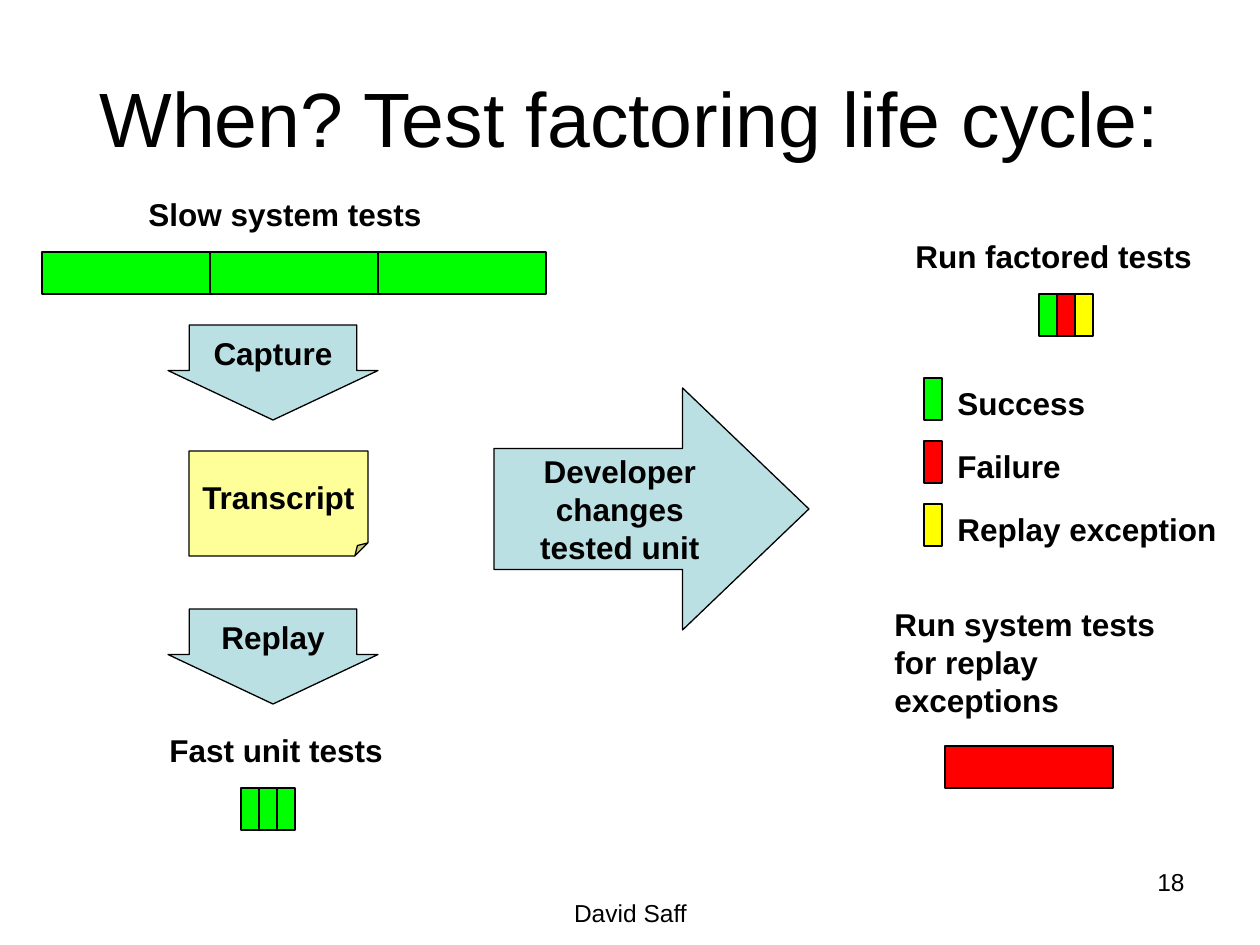
import pptx
import pptx.util
import pptx.dml.color
import pptx.enum.shapes
import pptx.enum.text
import pptx.oxml.ns
import lxml.etree

RGB = pptx.dml.color.RGBColor
BLACK = RGB(0x00, 0x00, 0x00)
GREEN = RGB(0x00, 0xFF, 0x00)
RED = RGB(0xFF, 0x00, 0x00)
YELLOW = RGB(0xFF, 0xFF, 0x00)
CREAM = RGB(0xFF, 0xFF, 0x99)
TEAL = RGB(0xBB, 0xE0, 0xE3)

KIND = pptx.enum.shapes.MSO_SHAPE
ALIGN = pptx.enum.text.PP_ALIGN
ANCHOR = pptx.enum.text.MSO_ANCHOR
PX = pptx.util.Inches(1) / 126
qn = pptx.oxml.ns.qn

deck = pptx.Presentation()
deck.slide_width = round(1260 * PX)
deck.slide_height = round(945 * PX)
slide = deck.slides.add_slide(deck.slide_layouts[5])


def write(text, box=None, shape=None, size=18, bold=True, align=ALIGN.LEFT,
          anchor=ANCHOR.TOP, wrap=True):
    """Put text in the given shape, or in a new text box at box (px)."""
    if shape is None:
        shape = slide.shapes.add_textbox(*[round(v * PX) for v in box])
    frame = shape.text_frame
    frame.text = text
    frame.word_wrap = wrap
    frame.vertical_anchor = anchor
    for para in frame.paragraphs:
        para.alignment = align
        para.font.name = "Arial"
        para.font.size = pptx.util.Pt(size)
        para.font.bold = bold
        para.font.color.rgb = BLACK


def draw(kind, box, color, adjust=None):
    """Add an outlined shape; adjust maps guide names to 1/100000 values."""
    shape = slide.shapes.add_shape(kind, *[round(v * PX) for v in box])
    shape.shadow.inherit = False
    shape.fill.solid()
    shape.fill.fore_color.rgb = color
    shape.line.color.rgb = BLACK
    shape.line.width = pptx.util.Pt(0.75)
    if adjust:
        # python-pptx lists no adjustments for some presets
        geom = shape._element.spPr.find(qn("a:prstGeom"))
        for old in geom.findall(qn("a:avLst")):
            geom.remove(old)
        guides = lxml.etree.SubElement(geom, qn("a:avLst"))
        for name, value in adjust.items():
            lxml.etree.SubElement(guides, qn("a:gd"), name=name,
                                  fmla=f"val {value}")
    return shape


# Title and footer
title = slide.shapes.title
title.left, title.top, title.width, title.height = [
    round(v * PX) for v in (63, 38, 1134, 157)]
write("When? Test factoring life cycle:", shape=title, size=44, bold=False,
      align=ALIGN.CENTER, anchor=ANCHOR.MIDDLE)
write("David Saff", (431, 892, 399, 34), size=14, bold=False,
      align=ALIGN.CENTER)
write("18", (903, 861, 294, 65), size=14, bold=False, align=ALIGN.RIGHT)

# Rows of test bars: left, top, bar width, colors
rows = [
    (42, 252, 168, [GREEN] * 3),
    (241, 788, 18, [GREEN] * 3),
    (1039, 294, 18, [GREEN, RED, YELLOW]),
    (945, 746, 168, [RED]),
]
for left, top, width, colors in rows:
    for i, color in enumerate(colors):
        draw(KIND.RECTANGLE, (left + i * width, top, width, 42), color)

# Headings of the rows
write("Slow system tests", (136, 189, 298, 50), wrap=False)
write("Fast unit tests", (157, 725, 240, 50))
write("Run factored tests", (903, 231, 325, 50))
write("Run system tests for replay exceptions", (882, 599, 325, 126))

# Steps of the cycle
down = {"adj1": 79800, "adj2": 52100}
right = {"adj1": 50000, "adj2": 52200}
steps = [
    ("Capture", KIND.DOWN_ARROW, (168, 325, 210, 95), TEAL, down),
    ("Transcript", KIND.FOLDED_CORNER, (189, 451, 179, 105), CREAM,
     {"adj": 12500}),
    ("Replay", KIND.DOWN_ARROW, (168, 609, 210, 95), TEAL, down),
    ("Developer\nchanges\ntested unit", KIND.RIGHT_ARROW,
     (494, 388, 315, 242), TEAL, right),
]
for text, kind, box, color, adjust in steps:
    write(text, shape=draw(kind, box, color, adjust), align=ALIGN.CENTER,
          anchor=ANCHOR.MIDDLE, wrap=False)

# Legend
legend = [("Success", GREEN), ("Failure", RED), ("Replay exception", YELLOW)]
for i, (text, color) in enumerate(legend):
    top = 378 + i * 63
    draw(KIND.RECTANGLE, (924, top, 18, 42), color)
    write(text, (945, top, 336, 50))

deck.save("out.pptx")
